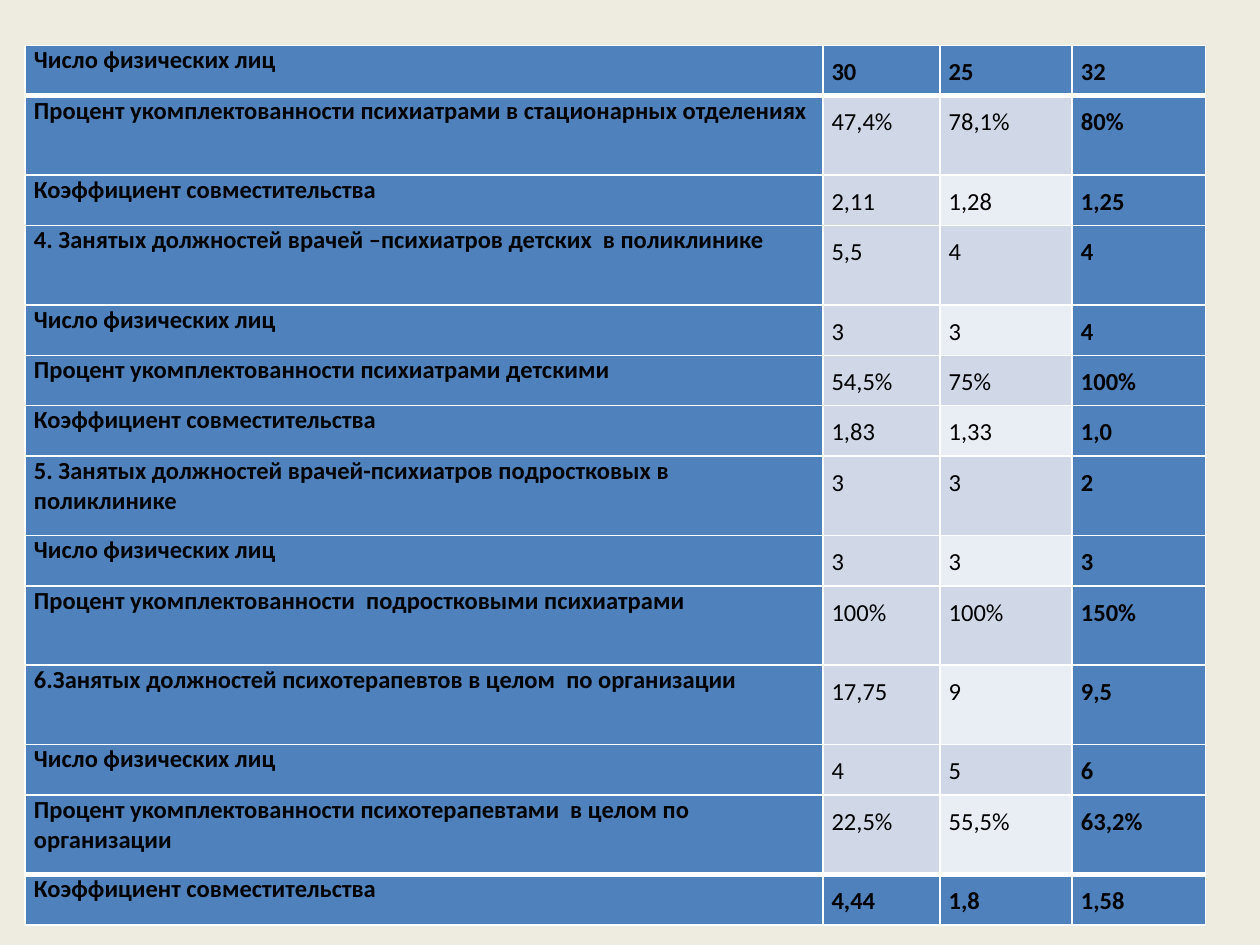
import pptx
import pptx.dml.color
import pptx.enum.text
import pptx.oxml.ns
import pptx.util
from lxml import etree
from pptx.util import Inches

COLORS = {
    "background": "EEECE1",
    "accent": "4F81BD",
    "band_dark": "D0D8E8",
    "band_light": "E9EDF4",
    "border": "FFFFFF",
    "text": "000000",
}

COL_WIDTHS = [6.33, 0.93, 1.05, 1.06]
SHORT_ROW, TALL_ROW = 0.4, 0.63
TALL_ROWS = {1, 3, 7, 9, 10, 12}

ROWS = [
    ("Число физических лиц", "30", "25", "32"),
    ("Процент укомплектованности психиатрами в стационарных отделениях", "47,4%", "78,1%", "80%"),
    ("Коэффициент совместительства", "2,11", "1,28", "1,25"),
    ("4. Занятых должностей врачей –психиатров детских  в поликлинике", "5,5", "4", "4"),
    ("Число физических лиц", "3", "3", "4"),
    ("Процент укомплектованности психиатрами детскими", "54,5%", "75%", "100%"),
    ("Коэффициент совместительства", "1,83", "1,33", "1,0"),
    ("5. Занятых должностей врачей-психиатров подростковых в поликлинике", "3", "3", "2"),
    ("Число физических лиц", "3", "3", "3"),
    ("Процент укомплектованности  подростковыми психиатрами", "100%", "100%", "150%"),
    ("6.Занятых должностей психотерапевтов в целом  по организации", "17,75", "9", "9,5"),
    ("Число физических лиц", "4", "5", "6"),
    ("Процент укомплектованности психотерапевтами  в целом по организации", "22,5%", "55,5%", "63,2%"),
    ("Коэффициент совместительства", "4,44", "1,8", "1,58"),
]
LAST_ROW, LAST_COL = len(ROWS) - 1, len(COL_WIDTHS) - 1

CELL_FORMAT = {
    "margin_left": Inches(0.07),
    "margin_right": Inches(0.07),
    "margin_top": 0,
    "margin_bottom": 0,
}
NUMBER_FORMAT = {"alignment": pptx.enum.text.PP_ALIGN.JUSTIFY, "line_spacing": 1.4}


def rgb(name):
    return pptx.dml.color.RGBColor.from_string(COLORS[name])


def apply_format(obj, values):
    for name, value in values.items():
        setattr(obj, name, value)


def set_borders(cell, widths):
    """Draw the cell's edges; widths maps L, R, T, B to points."""
    qn = pptx.oxml.ns.qn
    tcPr = cell._tc.get_or_add_tcPr()
    for side, width in widths.items():
        ln = etree.SubElement(tcPr, qn(f"a:ln{side}"), w=str(pptx.util.Pt(width)))
        fill = etree.SubElement(ln, qn("a:solidFill"))
        etree.SubElement(fill, qn("a:srgbClr"), val=COLORS["border"])


def is_emphasized(row, col):
    return row in (0, LAST_ROW) or col in (0, LAST_COL)


def fill_name(row, col):
    if is_emphasized(row, col):
        return "accent"
    return "band_light" if col == 2 and row % 2 == 0 else "band_dark"


def format_cell(cell, row, col, text):
    apply_format(cell, CELL_FORMAT)
    # Thick rules set off the first and last rows
    set_borders(cell, {
        "L": 1,
        "R": 1,
        "T": 3 if row in (1, LAST_ROW) else 1,
        "B": 3 if row in (0, LAST_ROW - 1) else 1,
    })
    cell.fill.solid()
    cell.fill.fore_color.rgb = rgb(fill_name(row, col))

    p = cell.text_frame.paragraphs[0]
    if col > 0:
        apply_format(p, NUMBER_FORMAT)
    r = p.add_run()
    r.text = text
    apply_format(r.font, {
        "name": "Calibri",
        "size": pptx.util.Pt(14),
        "bold": is_emphasized(row, col),
    })
    r.font.color.rgb = rgb("text")


def add_staff_table(s, left, top, width, height):
    shape = s.shapes.add_table(len(ROWS), len(COL_WIDTHS), left, top, width, height)
    table = shape.table
    for column, share in zip(table.columns, COL_WIDTHS):
        column.width = int(width * share / sum(COL_WIDTHS))
    for row, values in enumerate(ROWS):
        table.rows[row].height = Inches(TALL_ROW if row in TALL_ROWS else SHORT_ROW)
        for col, text in enumerate(values):
            format_cell(table.cell(row, col), row, col, text)


def main():
    prs = pptx.Presentation()
    prs.slide_width, prs.slide_height = Inches(10), Inches(7.5)
    s = prs.slides.add_slide(prs.slide_layouts[6])

    # Background
    s.background.fill.solid()
    s.background.fill.fore_color.rgb = rgb("background")

    # Staffing table
    add_staff_table(s, Inches(0.2), Inches(0.36), Inches(9.37), Inches(6.93))
    prs.save("out.pptx")


if __name__ == "__main__":
    main()
